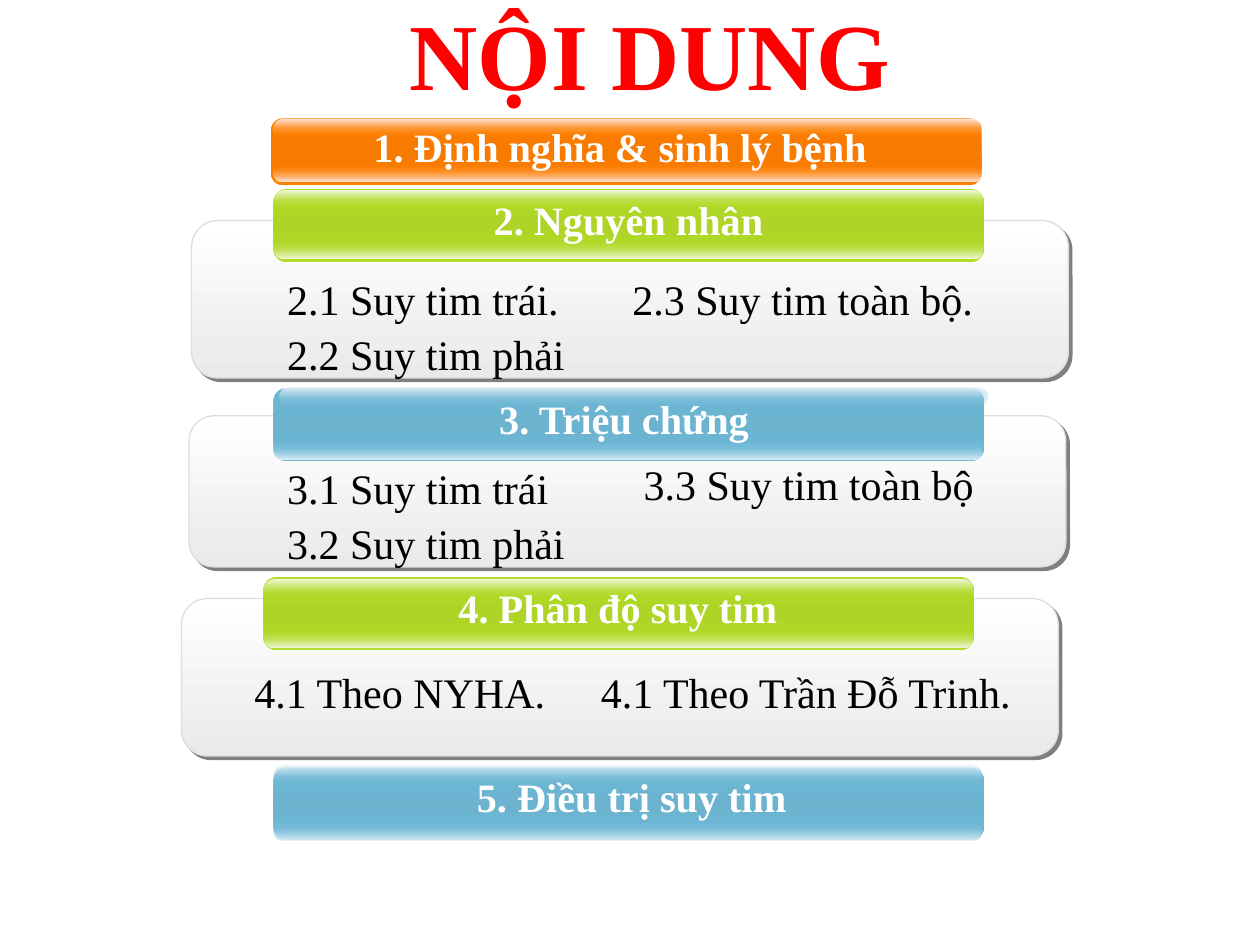
import pptx
import pptx.dml.color
import pptx.enum.shapes
import pptx.enum.text
import pptx.oxml
import pptx.oxml.ns
import pptx.util
from lxml import etree

PX = 9144  # EMU per px, 100 px to the inch
ALIGN = pptx.enum.text.PP_ALIGN
ANCHOR = pptx.enum.text.MSO_ANCHOR
AUTO = pptx.enum.text.MSO_AUTO_SIZE
NS = pptx.oxml.ns.nsdecls("a")
qn = pptx.oxml.ns.qn

HEADING = {"size": pptx.util.Pt(23), "bold": True}
BODY = {"size": pptx.util.Pt(24), "bold": False}
TITLE = {"size": pptx.util.Pt(54), "bold": True}

# bar edge, bar middle, top gloss, bottom gloss
ORANGE = ("FF7F00", "F67B00", "FFEAE4", "FFECE7")
GREEN = ("B3DC27", "ADD426", "F5FAED", "F3F9E9")
BLUE = ("6FB9D7", "6BB3CF", "ECF4F8", "E5F0F6")


def rgb(value):
    return pptx.dml.color.RGBColor.from_string(value)


def shadow(alpha, distance, color="000000"):
    """Effect list with a sharp shadow to the lower right."""
    return pptx.oxml.parse_xml(
        f'<a:effectLst {NS}><a:outerShdw blurRad="0" dist="{distance}" dir="2700000" '
        f'algn="ctr" rotWithShape="0"><a:srgbClr val="{color}"><a:alpha val="{alpha * 1000}"/>'
        f'</a:srgbClr></a:outerShdw></a:effectLst>')


class Deck:
    def __init__(self, font):
        self.prs = pptx.Presentation()
        self.prs.slide_width = 1000 * PX
        self.prs.slide_height = 750 * PX
        self.font = font
        self.slide = self.prs.slides.add_slide(self.prs.slide_layouts[5])

    def styled_run(self, p, text, style, color):
        r = p.add_run()
        r.text = text
        for name, value in {"name": self.font, **style}.items():
            setattr(r.font, name, value)
        r.font.color.rgb = rgb(color)
        return r

    def title(self, text, box, color):
        sp = self.slide.shapes.title
        for name, value in zip(("left", "top", "width", "height"), box):
            setattr(sp, name, value * PX)
        sp.text_frame.vertical_anchor = ANCHOR.BOTTOM
        p = sp.text_frame.paragraphs[0]
        p.alignment = ALIGN.CENTER
        p.line_spacing = pptx.util.Pt(58)
        self.styled_run(p, text, TITLE, color)

    def rounded(self, box, radius, stops):
        """Rounded box with a downward gradient; stops are (percent, colour, opacity)."""
        sp = self.slide.shapes.add_shape(
            pptx.enum.shapes.MSO_SHAPE.ROUNDED_RECTANGLE, *(v * PX for v in box))
        sp.adjustments[0] = radius
        sp.shadow.inherit = False
        sp.line.fill.background()
        sp.fill.gradient()
        sp.fill.gradient_angle = 270
        gs_list = sp._element.spPr.find(".//" + qn("a:gsLst"))
        gs_list.clear()
        for position, color, opacity in stops:
            gs = etree.SubElement(gs_list, qn("a:gs"), pos=str(position * 1000))
            clr = etree.SubElement(gs, qn("a:srgbClr"), val=color)
            if opacity < 100:
                etree.SubElement(clr, qn("a:alpha"), val=str(opacity * 1000))
        return sp

    def panel(self, box):
        sp = self.rounded(box, 0.167, [(0, "FFFFFF", 100), (100, "EAEAEA", 100)])
        sp.line.color.rgb = rgb("DDDDDD")
        sp.line.width = pptx.util.Pt(0.75)
        spPr = sp._element.spPr
        spPr.replace(spPr.find(qn("a:effectLst")), shadow(50, pptx.util.Pt(2.8)))

    def bar(self, box, colors, top_gloss, bottom_gloss):
        edge, middle, top_light, bottom_light = colors
        self.rounded(box, 0.175, [(0, edge, 100), (50, middle, 100), (100, edge, 100)])
        size = (562, box[3] // 4)
        self.rounded((*bottom_gloss, *size), 0.5, [(0, edge, 0), (100, bottom_light, 100)])
        self.rounded((*top_gloss, *size), 0.5, [(0, top_light, 100), (100, edge, 0)])

    def text(self, box, lines, style=BODY, color="000000", wrap=True, align=ALIGN.LEFT,
             spacing=1.1):
        sp = self.slide.shapes.add_textbox(*(v * PX for v in box))
        tf = sp.text_frame
        tf.word_wrap = wrap
        tf.auto_size = AUTO.SHAPE_TO_FIT_TEXT
        runs = []
        for i, line in enumerate(lines):
            p = tf.add_paragraph() if i else tf.paragraphs[0]
            p.alignment = align
            p.line_spacing = spacing
            runs.append(self.styled_run(p, line, style, color))
        return runs

    def heading(self, box, line):
        for r in self.text(box, [line], HEADING, "FFFFFF", False, ALIGN.CENTER, 1.0):
            fill = r._r.get_or_add_rPr().find(qn("a:solidFill"))
            fill.addnext(shadow(100, pptx.util.Pt(2)))


# panel, bar, colours, top gloss, bottom gloss, heading box, heading, items
SECTIONS = [
    (None, (215, 94, 564, 53), ORANGE, (217, 95), (217, 131),
     (285, 92, 415, 49), "1. Định nghĩa & sinh lý bệnh", []),
    ((152, 175, 696, 125), (217, 150, 564, 58), GREEN, (218, 151), (218, 191),
     (381, 150, 236, 49), "2. Nguyên nhân",
     [((218, 208, 257, 99), ["2.1 Suy tim trái. 2.2 Suy tim phải"], 1.1),
      ((492, 208, 295, 55), ["2.3 Suy tim toàn bộ."], 1.1)]),
    ((150, 330, 696, 120), (217, 308, 564, 58), BLUE, (222, 308), (217, 351),
     (384, 308, 223, 49), "3. Triệu chứng",
     [((218, 358, 324, 99), ["3.1 Suy tim trái", "3.2 Suy tim phải"], 1.1),
      ((501, 367, 282, 42), ["3.3 Suy tim toàn bộ"], 0.8)]),
    ((144, 475, 696, 125), (209, 458, 564, 58), GREEN, (210, 460), (210, 500),
     (353, 458, 275, 49), "4. Phân độ suy tim",
     [((192, 520, 257, 55), ["4.1 Theo NYHA."], 1.1),
      ((467, 520, 363, 55), ["4.1 Theo Trần Đỗ Trinh."], 1.1)]),
    (None, (217, 609, 564, 58), BLUE, (217, 608), (217, 653),
     (364, 608, 275, 49), "5. Điều trị suy tim", []),
]


def main():
    deck = Deck("Times New Roman")
    deck.title("NỘI DUNG ", (75, -8, 900, 100), "FF0000")
    for panel, bar, colors, top, bottom, heading_box, heading, items in SECTIONS:
        if panel:
            deck.panel(panel)
        deck.bar(bar, colors, top, bottom)
        deck.heading(heading_box, heading)
        for box, lines, spacing in items:
            deck.text(box, lines, spacing=spacing)
    deck.prs.save("out.pptx")


if __name__ == "__main__":
    main()
